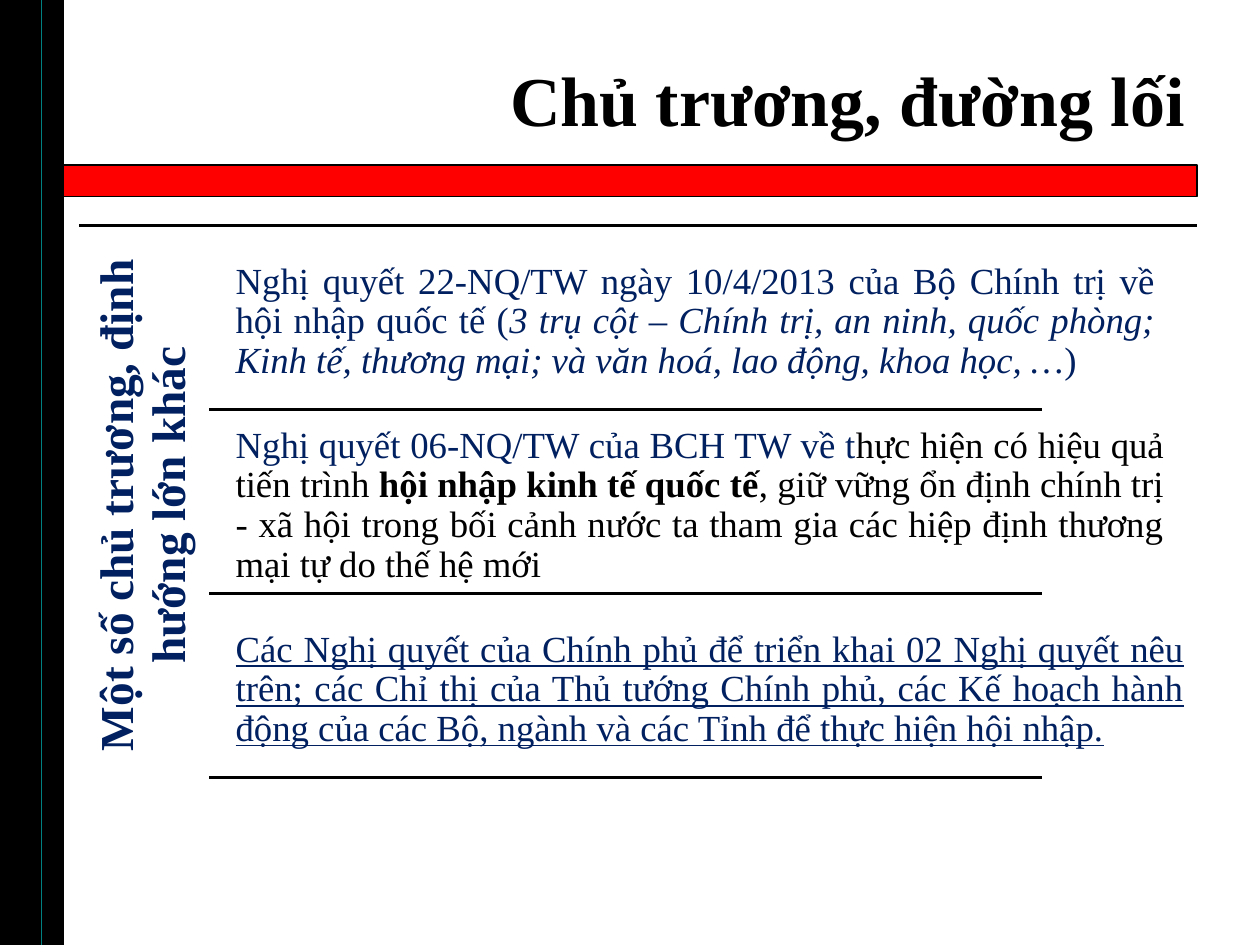
from lxml import etree
from pptx import Presentation
from pptx.dml.color import RGBColor
from pptx.enum.shapes import MSO_CONNECTOR, MSO_SHAPE
from pptx.enum.text import MSO_ANCHOR, PP_ALIGN
from pptx.oxml.ns import qn
from pptx.util import Inches, Pt

BLACK = RGBColor(0x00, 0x00, 0x00)
RED = RGBColor(0xFF, 0x00, 0x00)
TEAL = RGBColor(0x00, 0x80, 0x80)
NAVY = RGBColor(0x00, 0x20, 0x60)
FONT = "Times New Roman"
W, H = 10, 7.5
BAND = 0.05 * W   # width of the side band
RIGHT = 0.95 * W  # right edge of the content


def add_text(slide, box, runs, size, align, inset=0.09, spacing=0.9, vert=None):
    """Add one paragraph; each run is (text, colour, font attributes)."""
    sp = slide.shapes.add_textbox(*map(Inches, box))
    tf = sp.text_frame
    tf.word_wrap = True
    tf.vertical_anchor = MSO_ANCHOR.MIDDLE
    tf.margin_left = tf.margin_right = Inches(inset)
    tf.margin_top = tf.margin_bottom = Inches(inset)
    if vert:
        sp.element.txBody.find(qn("a:bodyPr")).set("vert", vert)
    p = tf.paragraphs[0]
    p.alignment = align
    p.line_spacing = spacing
    for text, color, style in runs:
        r = p.add_run()
        r.text = text
        r.font.name = FONT
        r.font.size = Pt(size)
        r.font.color.rgb = color
        for name, value in style.items():
            setattr(r.font, name, value)


def add_bar(slide, box, color):
    sp = slide.shapes.add_shape(MSO_SHAPE.RECTANGLE, *map(Inches, box))
    sp.shadow.inherit = False
    sp.fill.solid()
    sp.fill.fore_color.rgb = color
    sp.line.color.rgb = BLACK
    sp.line.width = Pt(0.75)


def add_line(slide, x1, y1, x2, y2, color=BLACK, width=2):
    line = slide.shapes.add_connector(
        MSO_CONNECTOR.STRAIGHT, *map(Inches, (x1, y1, x2, y2)))
    line.line.color.rgb = color
    line.line.width = Pt(width)
    etree.SubElement(line.element.spPr, qn("a:effectLst"))


def add_header(slide, x, y, w, h):
    """Title above a red bar."""
    bar_h = 0.25
    title = [("Chủ trương, đường lối", BLACK, {"bold": True})]
    add_text(slide, (x, y, w, 0.96), title, 40, PP_ALIGN.RIGHT, 0.1, 1)
    add_bar(slide, (x, y + h - bar_h, w, bar_h), RED)


def add_side_band(slide, x, y, w, h):
    add_bar(slide, (x, y, w, h), BLACK)
    add_line(slide, x + w * 0.66, y, x + w * 0.66, y + h, TEAL, 0.75)


def add_policy_list(slide, x, y, w, h, label, rows):
    """Rotated label on the left, ruled rows of text on the right."""
    label_w, gap, rule_w = 1.03, 0.07, 6.61
    row_h = (h - gap * len(rows)) / len(rows)
    add_line(slide, x, y, x + w, y)
    add_text(slide, (x, y, label_w, h + 0.06), label, 27, PP_ALIGN.CENTER,
             0.11, vert="vert270")
    left = x + label_w
    for i, (text_w, runs) in enumerate(rows):
        top = y + gap + i * (row_h + gap)
        add_text(slide, (left + 0.12, top, text_w, row_h), runs, 21,
                 PP_ALIGN.JUSTIFY)
        add_line(slide, left, top + row_h, left + rule_w, top + row_h)


LABEL = [("Một số chủ trương, định hướng lớn khác", NAVY, {"bold": True})]
# Each row: text width, runs
ROWS = [
    (7.48, [
        ("Nghị quyết 22-NQ/TW ngày 10/4/2013 của Bộ Chính trị về hội nhập "
         "quốc tế (", NAVY, {}),
        ("3 trụ cột – Chính trị, an ninh, quốc phòng; Kinh tế, thương mại; "
         "và văn hoá, lao động, khoa học, …", NAVY, {"italic": True}),
        (")", NAVY, {}),
    ]),
    (7.55, [
        ("Nghị quyết 06-NQ/TW của BCH TW về t", NAVY, {}),
        ("hực hiện có hiệu quả tiến trình ", BLACK, {}),
        ("hội nhập kinh tế quốc tế", BLACK, {"bold": True}),
        (", giữ vững ổn định chính trị - xã hội trong bối cảnh nước ta tham "
         "gia các hiệp định thương mại tự do thế hệ mới", BLACK, {}),
    ]),
    (7.71, [
        ("Các Nghị quyết của Chính phủ để triển khai 02 Nghị quyết nêu trên; "
         "các Chỉ thị của Thủ tướng Chính phủ, các Kế hoạch hành động của "
         "các Bộ, ngành và các Tỉnh để thực hiện hội nhập.", NAVY,
         {"underline": True}),
    ]),
]


def main():
    prs = Presentation()
    prs.slide_width, prs.slide_height = Inches(W), Inches(H)
    slide = prs.slides.add_slide(prs.slide_layouts[6])
    add_header(slide, BAND, 0.04 * H, RIGHT - BAND, 1.26)
    add_side_band(slide, 0, 0, BAND, H)
    add_policy_list(slide, 0.63, 1.79, RIGHT - 0.63, 4.38, LABEL, ROWS)
    prs.save("out.pptx")


if __name__ == "__main__":
    main()
